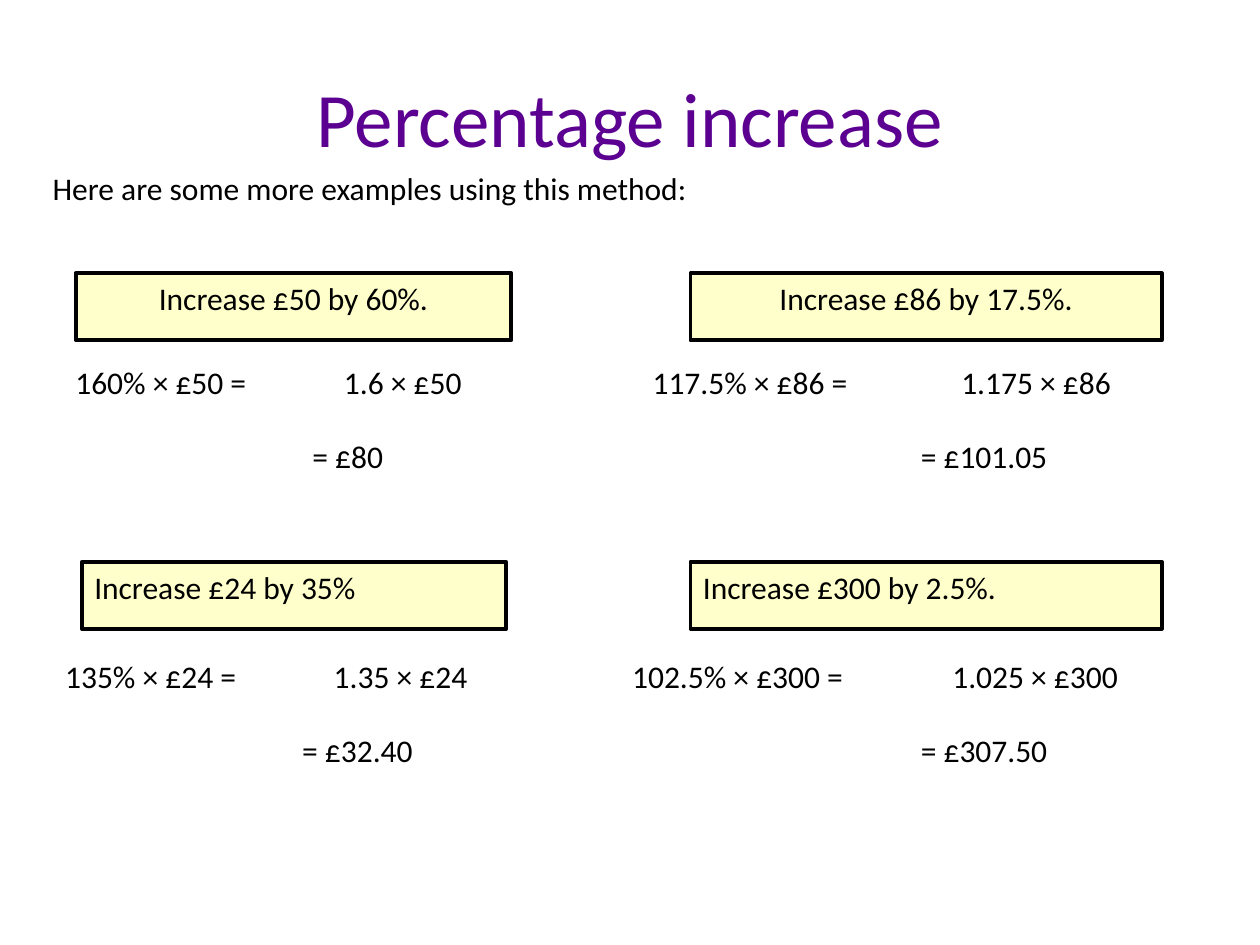
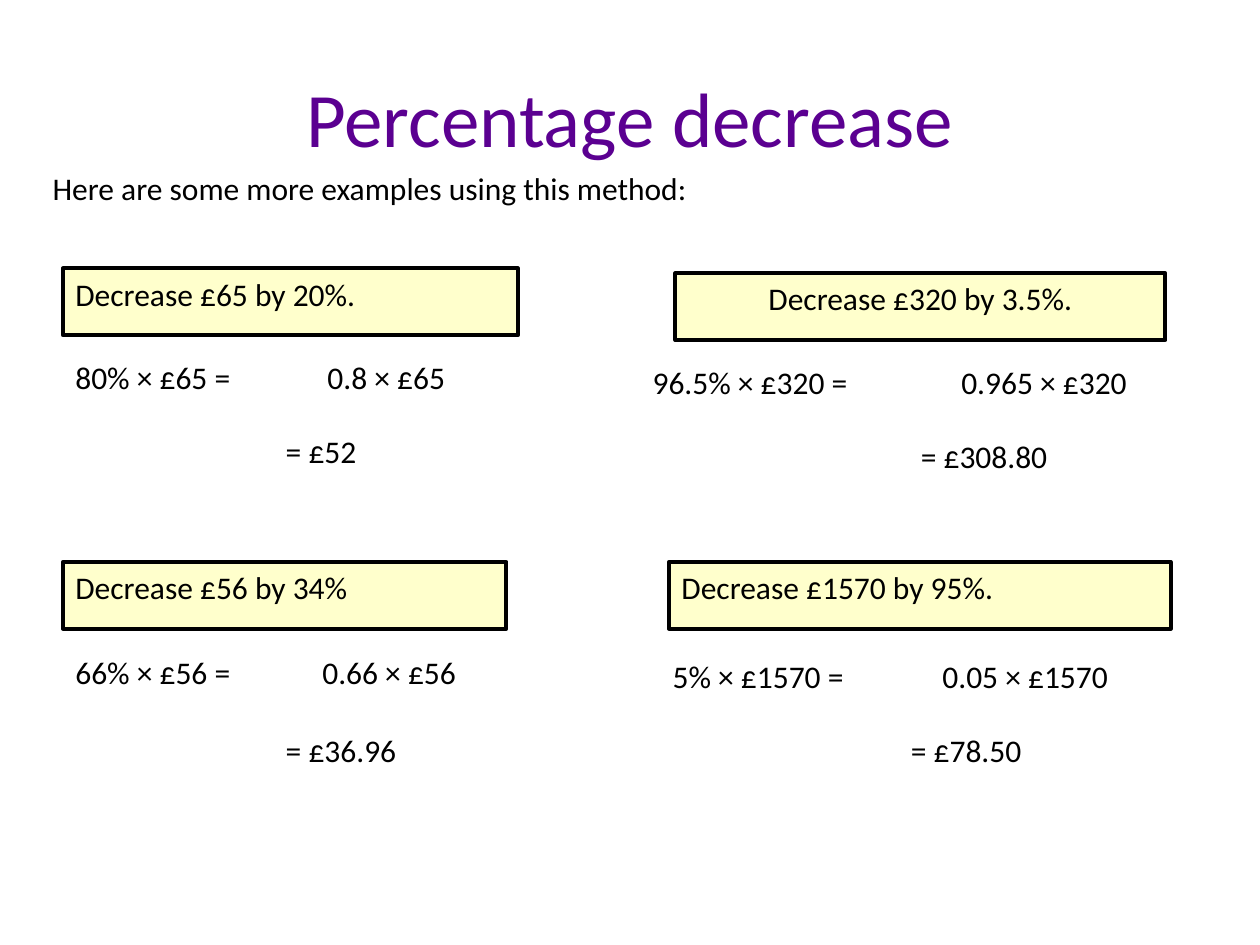
import collections
import pptx
import pptx.util
import pptx.dml.color
import pptx.enum.shapes
import pptx.enum.text

Pt = pptx.util.Pt
ALIGN = pptx.enum.text.PP_ALIGN
ANCHOR = pptx.enum.text.MSO_ANCHOR

FONT = "Calibri"
PURPLE, BLACK, CREAM, WHITE = "5B0091", "000000", "FFFFCC", "FFFFFF"
BOX_H, TEXT_H = 38.2, 36
TOP_ROW = (156.2, 203.8, 246.2)
RAISED_TOP_ROW = (153.4, 200.9, 243.4)
BOTTOM_ROW = (321.1, 372.2, 414)
RAISED_BOTTOM_ROW = (321.1, 369.4, 414)

Example = collections.namedtuple("Example", "row align question percent decimal result")

INCREASES = [
    Example(TOP_ROW, ALIGN.CENTER, (43.2, 249.1, "Increase £50 by 60%."),
            (36, 164, "160% × £50 ="), (189.4, 115, "1.6 × £50"), (171.4, 76, "= £80")),
    Example(TOP_ROW, ALIGN.CENTER, (394.6, 269.3, "Increase £86 by 17.5%."),
            (365.8, 184, "117.5% × £86 ="), (542.2, 142, "1.175 × £86"), (519.1, 122, "= £101.05")),
    Example(BOTTOM_ROW, ALIGN.LEFT, (46.8, 242.6, "Increase £24 by 35%"),
            (30.2, 164, "135% × £24 ="), (183.6, 129, "1.35 × £24"), (165.6, 109, "= £32.40")),
    Example(BOTTOM_ROW, ALIGN.LEFT, (394.6, 269.3, "Increase £300 by 2.5%."),
            (354.2, 197, "102.5% × £300 ="), (537.1, 156, "1.025 × £300"), (519.1, 122, "= £307.50")),
]

DECREASES = [
    Example(RAISED_TOP_ROW, ALIGN.LEFT, (36, 259.9, "Decrease £65 by 20%."),
            (36, 150, "80% × £65 ="), (180, 115, "0.8 × £65"), (156.2, 76, "= £52")),
    Example(TOP_ROW, ALIGN.CENTER, (385.9, 280.1, "Decrease £320 by 3.5%."),
            (365.8, 184, "96.5% × £320 ="), (542.2, 156, "0.965 × £320"), (519.1, 122, "= £308.80")),
    Example(RAISED_BOTTOM_ROW, ALIGN.LEFT, (36, 253.4, "Decrease £56 by 34%"),
            (36, 150, "66% × £56 ="), (177.1, 129, "0.66 × £56"), (156.2, 109, "= £36.96")),
    Example(BOTTOM_ROW, ALIGN.LEFT, (382.3, 286.6, "Decrease £1570 by 95%."),
            (377.3, 164, "5% × £1570 ="), (531.4, 156, "0.05 × £1570"), (513.4, 109, "= £78.50")),
]


def rgb(value):
    return pptx.dml.color.RGBColor.from_string(value)


def write(sp, text, size=18, color=BLACK, align=ALIGN.LEFT, anchor=ANCHOR.TOP):
    tf = sp.text_frame
    tf.word_wrap = True
    tf.auto_size = pptx.enum.text.MSO_AUTO_SIZE.NONE
    tf.vertical_anchor = anchor
    p = tf.paragraphs[0]
    p.alignment = align
    r = p.add_run()
    r.text = text
    r.font.name = FONT
    r.font.size = Pt(size)
    r.font.color.rgb = rgb(color)


def add_title(s, text):
    sp = s.shapes.title
    sp.left, sp.top, sp.width, sp.height = Pt(36), Pt(21.6), Pt(648), Pt(90)
    write(sp, text, 44, PURPLE, ALIGN.CENTER, ANCHOR.MIDDLE)


def add_text(s, x, y, w, text):
    sp = s.shapes.add_textbox(Pt(x), Pt(y), Pt(w), Pt(TEXT_H))
    write(sp, text)


def add_question(s, x, y, w, text, align):
    sp = s.shapes.add_shape(pptx.enum.shapes.MSO_SHAPE.RECTANGLE,
                            Pt(x), Pt(y), Pt(w), Pt(BOX_H))
    sp.shadow.inherit = False
    sp.fill.solid()
    sp.fill.fore_color.rgb = rgb(CREAM)
    sp.line.color.rgb = rgb(BLACK)
    sp.line.width = Pt(2.25)
    write(sp, text, align=align)


def add_example(s, example):
    box_y, working_y, result_y = example.row
    x, w, text = example.question
    add_question(s, x, box_y, w, text, example.align)
    for (x, w, text), y in ((example.percent, working_y),
                            (example.decimal, working_y),
                            (example.result, result_y)):
        add_text(s, x, y, w, text)


def add_examples_slide(prs, title, examples):
    s = prs.slides.add_slide(prs.slide_layouts.get_by_name("Title Only"))
    s.background.fill.solid()
    s.background.fill.fore_color.rgb = rgb(WHITE)
    add_title(s, title)
    add_text(s, 23, 92.9, 545.8, "Here are some more examples using this method:")
    for example in examples:
        add_example(s, example)


def main():
    prs = pptx.Presentation()
    prs.slide_width, prs.slide_height = Pt(720), Pt(540)
    add_examples_slide(prs, "Percentage increase", INCREASES)
    add_examples_slide(prs, "Percentage decrease", DECREASES)
    prs.save("out.pptx")


if __name__ == "__main__":
    main()
